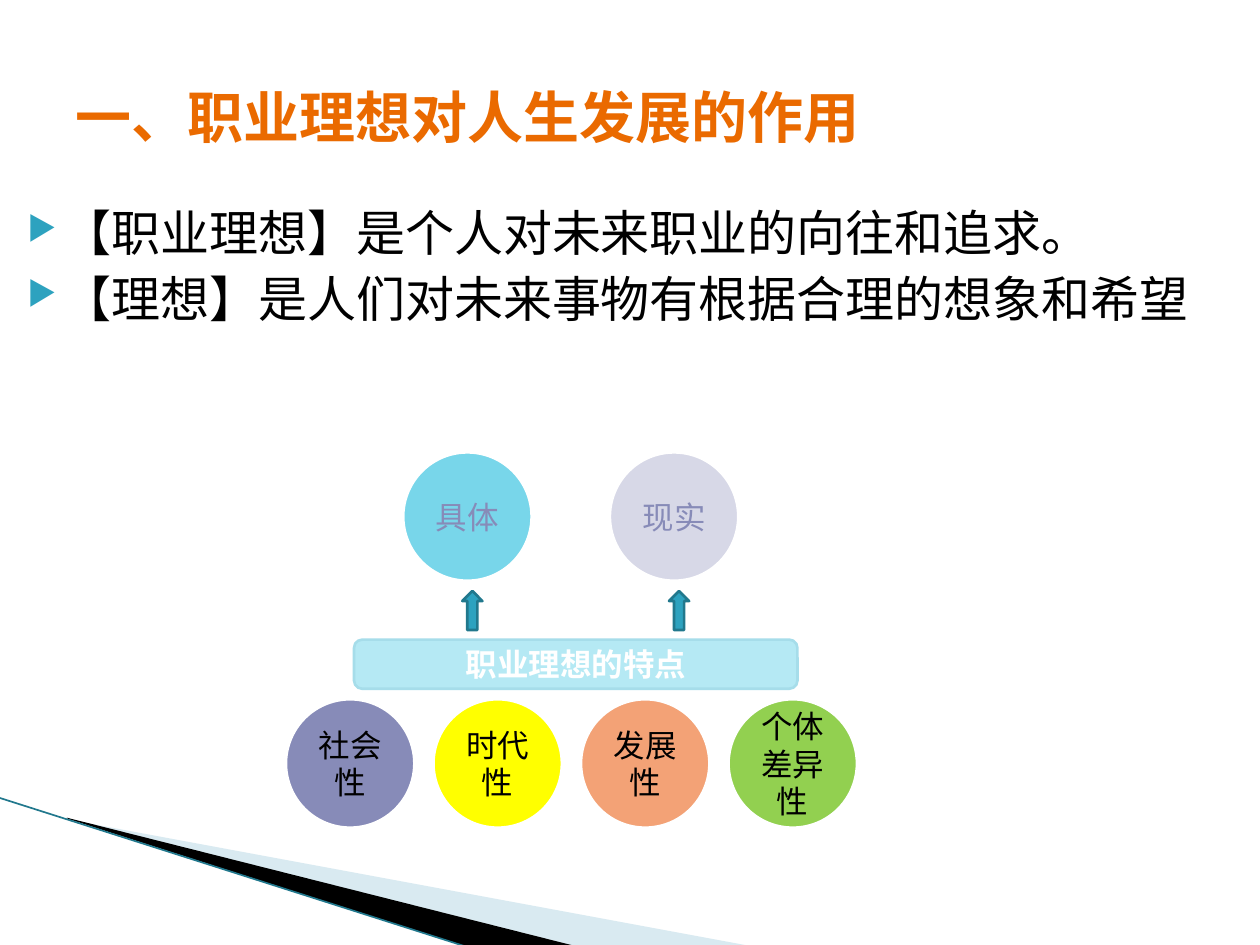
from dataclasses import dataclass

from lxml.etree import SubElement
from pptx import Presentation
from pptx.dml.color import RGBColor
from pptx.enum.shapes import MSO_CONNECTOR, MSO_SHAPE
from pptx.enum.text import MSO_ANCHOR as Anchor, PP_ALIGN as Align
from pptx.oxml.ns import qn
from pptx.util import Pt


@dataclass(frozen=True)
class Theme:
    title_color: str = "EA6A00"
    ink: str = "000000"
    white: str = "FFFFFF"
    accent: str = "2DA2BF"
    accent_dark: str = "21788D"
    wedge_light: str = "A0CBDC"
    bar_fill: str = "B5E9F4"
    bar_line: str = "A6DDEA"
    lavender: str = "878BB8"
    lavender_pale: str = "D7D8E7"
    sky: str = "78D6EA"
    yellow: str = "FFFF00"
    peach: str = "F3A276"
    green: str = "92D050"
    text_font: str = "Noto Sans CJK SC"
    diagram_font: str = "DejaVu Sans Mono"
    title_size: float = 32
    body_size: float = 28
    diagram_size: float = 18


class SlideBuilder:
    """Draws styled elements on one slide, with lengths in points."""

    def __init__(self, slide, theme):
        self.slide = slide
        self.shapes = slide.shapes
        self.theme = theme

    def color(self, value):
        return RGBColor.from_string(value)

    def format_runs(self, paragraph, size, color, font, bold=False):
        for run in paragraph.runs:
            run.font.size = Pt(size)
            run.font.bold = bold
            run.font.name = font
            run.font.color.rgb = self.color(color)
            east_asian = SubElement(run._r.get_or_add_rPr(), qn("a:ea"))
            east_asian.set("typeface", self.theme.text_font)

    def wedge(self, points, fill, opacity=100):
        builder = self.shapes.build_freeform(Pt(points[0][0]), Pt(points[0][1]))
        builder.add_line_segments([(Pt(x), Pt(y)) for x, y in points[1:]])
        shape = builder.convert_to_shape()
        shape.shadow.inherit = False
        shape.fill.solid()
        shape.fill.fore_color.rgb = self.color(fill)
        shape.line.fill.background()
        if opacity < 100:
            color = shape._element.spPr.find(qn("a:solidFill"))[0]
            SubElement(color, qn("a:alpha")).set("val", str(opacity * 1000))

    def line(self, start, end, color, width):
        connector = self.shapes.add_connector(
            MSO_CONNECTOR.STRAIGHT, *(Pt(value) for value in start + end))
        connector.line.color.rgb = self.color(color)
        connector.line.width = Pt(width)
        SubElement(connector._element.spPr, qn("a:effectLst"))

    def text_box(self, box):
        frame = self.shapes.add_textbox(*(Pt(value) for value in box)).text_frame
        frame.word_wrap = True
        return frame

    def title(self, text, box):
        frame = self.text_box(box)
        frame.vertical_anchor = Anchor.MIDDLE
        frame.text = text
        self.format_runs(frame.paragraphs[0], self.theme.title_size,
                         self.theme.title_color, self.theme.text_font, True)

    def bullets(self, items, box):
        frame = self.text_box(box)
        frame.margin_right = 0
        frame.text = "\n".join(items)
        for index, paragraph in enumerate(frame.paragraphs):
            if index:
                paragraph.space_before = Pt(4)
            properties = paragraph._p.get_or_add_pPr()
            properties.set("marL", str(Pt(28.8)))
            properties.set("indent", str(Pt(-20.16)))
            bullet_color = SubElement(properties, qn("a:buClr"))
            SubElement(bullet_color, qn("a:srgbClr")).set("val", self.theme.accent)
            SubElement(properties, qn("a:buSzPct")).set("val", "68000")
            SubElement(properties, qn("a:buChar")).set("char", "▶")
            self.format_runs(paragraph, self.theme.body_size,
                             self.theme.ink, self.theme.text_font)

    def block(self, kind, box, fill, line):
        shape = self.shapes.add_shape(kind, *(Pt(value) for value in box))
        shape.shadow.inherit = False
        shape.fill.solid()
        shape.fill.fore_color.rgb = self.color(fill)
        shape.line.color.rgb = self.color(line)
        shape.line.width = Pt(1.5)
        return shape

    def label(self, shape, text, color, bold=False):
        frame = shape.text_frame
        frame.word_wrap = True
        frame.vertical_anchor = Anchor.MIDDLE
        frame.text = text
        paragraph = frame.paragraphs[0]
        paragraph.alignment = Align.CENTER
        self.format_runs(paragraph, self.theme.diagram_size, color,
                         self.theme.diagram_font, bold)

    def bar(self, text, box):
        shape = self.block(MSO_SHAPE.FLOWCHART_ALTERNATE_PROCESS, box,
                           self.theme.bar_fill, self.theme.bar_line)
        self.label(shape, text, self.theme.white, True)

    def circle_row(self, circles, left, top, step, text_color, diameter=73.4):
        for index, (text, fill) in enumerate(circles):
            box = (left + index * step, top, diameter, diameter)
            shape = self.block(MSO_SHAPE.FLOWCHART_CONNECTOR, box,
                               fill, self.theme.white)
            self.label(shape, text, text_color)

    def up_arrow(self, box):
        self.block(MSO_SHAPE.UP_ARROW, box, self.theme.accent, self.theme.accent_dark)


def main():
    theme = Theme()
    presentation = Presentation()
    presentation.slide_width, presentation.slide_height = Pt(720), Pt(540)
    slide = presentation.slides.add_slide(presentation.slide_layouts[6])
    builder = SlideBuilder(slide, theme)

    builder.wedge([(39.6, 468.5), (428.4, 540.5), (328.3, 540.5), (39.6, 468)],
                  theme.wedge_light, 40)
    builder.wedge([(38.2, 467.3), (329, 540.7), (267.8, 541.4), (38.9, 468)], theme.ink)
    builder.line((-0.7, 455.8), (267.8, 541.4), theme.accent_dark, 0.95)

    builder.bullets(["【职业理想】是个人对未来职业的向往和追求。",
                     "【理想】是人们对未来事物有根据合理的想象和希望"],
                    (0, 112.3, 686.2, 356.4))
    builder.title("一、职业理想对人生发展的作用", (36, 21.6, 648, 90))

    builder.bar("职业理想的特点", (202.3, 365.5, 253.4, 28.1))
    builder.circle_row([("社会性", theme.lavender), ("时代性", theme.yellow),
                        ("发展性", theme.peach), ("个体差异性", theme.green)],
                       163.4, 399.6, 84.3, theme.ink)
    goal_step = 118.1
    builder.circle_row([("具体", theme.sky), ("现实", theme.lavender_pale)],
                       230.4, 258.5, goal_step, theme.lavender)
    for index in range(2):
        builder.up_arrow((264.2 + index * goal_step, 337.7, 11.5, 22.3))

    presentation.save("out.pptx")


if __name__ == "__main__":
    main()
